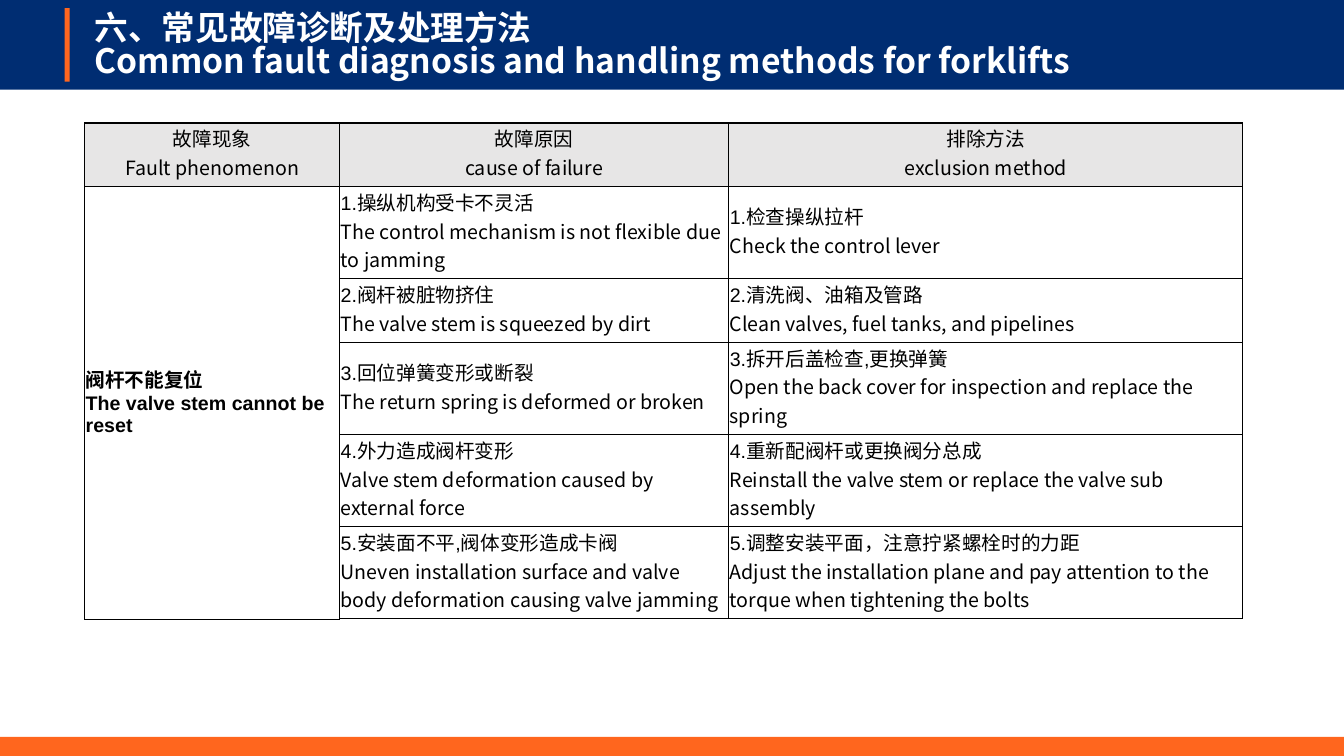
from lxml import etree
from pptx import Presentation
from pptx.dml.color import RGBColor
from pptx.enum.shapes import MSO_SHAPE
from pptx.enum.text import MSO_ANCHOR, PP_ALIGN
from pptx.oxml.ns import qn
from pptx.util import Inches, Pt

RECT = MSO_SHAPE.RECTANGLE
MIDDLE = MSO_ANCHOR.MIDDLE
CENTER, LEFT = PP_ALIGN.CENTER, PP_ALIGN.LEFT

COLORS = {"navy": "002D72", "orange": "FF661F", "foot": "FF661E",
          "head": "E7E6E6", "white": "FFFFFF", "black": "000000"}
SANS, ASIAN = "Arial", "Noto Sans CJK SC"

TITLE = ("六、常见故障诊断及处理方法",
         "Common fault diagnosis and handling methods for forklifts")
HEADS = [("故障现象", "Fault phenomenon"),
         ("故障原因", "cause of failure"),
         ("排除方法", "exclusion method")]
FAULT = ("阀杆不能复位", "The valve stem cannot be reset")
REPAIRS = [
    (("1.操纵机构受卡不灵活", "The control mechanism is not flexible due to jamming"),
     ("1.检查操纵拉杆", "Check the control lever")),
    (("2.阀杆被脏物挤住", "The valve stem is squeezed by dirt"),
     ("2.清洗阀、油箱及管路", "Clean valves, fuel tanks, and pipelines")),
    (("3.回位弹簧变形或断裂", "The return spring is deformed or broken"),
     ("3.拆开后盖检查,更换弹簧",
      "Open the back cover for inspection and replace the spring")),
    (("4.外力造成阀杆变形", "Valve stem deformation caused by external force"),
     ("4.重新配阀杆或更换阀分总成",
      "Reinstall the valve stem or replace the valve sub assembly")),
    (("5.安装面不平,阀体变形造成卡阀",
      "Uneven installation surface and valve body deformation causing valve jamming"),
     ("5.调整安装平面，注意拧紧螺栓时的力距",
      "Adjust the installation plane and pay attention to the torque "
      "when tightening the bolts")),
]
COLS = [18.98, 28.95, 38.25]
ROWS = [8.4, 12.2, 8.4, 12.2, 12.2, 12.2]


class Page:
    """Draws on one slide; lengths are percentages of its width and height."""

    def __init__(self, deck):
        self.deck = deck
        self.slide = deck.slides.add_slide(deck.slide_layouts[6])

    def wide(self, share):
        return round(self.deck.slide_width * share / 100)

    def high(self, share):
        return round(self.deck.slide_height * share / 100)

    def area(self, x, y, w, h):
        return self.wide(x), self.high(y), self.wide(w), self.high(h)

    def paint(self, fill, color):
        fill.solid()
        fill.fore_color.rgb = RGBColor.from_string(COLORS[color])

    def bar(self, color, *box):
        shape = self.slide.shapes.add_shape(RECT, *self.area(*box))
        shape.shadow.inherit = False
        self.paint(shape.fill, color)
        shape.line.fill.background()

    def run(self, para, text, size, color, face, bold=False):
        run = para.add_run()
        run.text = text
        font = run.font
        font.size, font.bold, font.name = Pt(size), bold, face
        font.color.rgb = RGBColor.from_string(COLORS[color])
        etree.SubElement(run._r.get_or_add_rPr(), qn("a:ea"), typeface=ASIAN)

    def title(self, lines, *box):
        frame = self.slide.shapes.add_textbox(*self.area(*box)).text_frame
        frame.word_wrap = True
        frame.vertical_anchor = MIDDLE
        para = frame.paragraphs[0]
        para.line_spacing = 0.82
        for i, line in enumerate(lines):
            if i:
                para.add_line_break()
            self.run(para, line, 24, "white", ASIAN, True)

    def table(self, x, y, cols, rows):
        box = self.area(x, y, sum(cols), sum(rows))
        table = self.slide.shapes.add_table(len(rows), len(cols), *box).table
        for col, share in zip(table.columns, cols):
            col.width = self.wide(share)
        for row, share in zip(table.rows, rows):
            row.height = self.high(share)
        for r in range(len(rows)):
            for c in range(len(cols)):
                cell = table.cell(r, c)
                self.edges(cell, {"L": c == 0, "R": c == len(cols) - 1,
                                  "T": r < 2, "B": r in (0, len(rows) - 1)})
                self.paint(cell.fill, "white" if r else "head")
        return table

    def edges(self, cell, sides):
        """Border the cell; a side marked true is drawn heavy."""
        props = cell._tc.get_or_add_tcPr()
        for side, heavy in sides.items():
            line = etree.SubElement(props, qn(f"a:ln{side}"),
                                    w=str(Pt(1 if heavy else 0.5)))
            fill = etree.SubElement(line, qn("a:solidFill"))
            etree.SubElement(fill, qn("a:srgbClr"), val=COLORS["black"])

    def cell(self, cell, pair, align=LEFT, second=ASIAN, bold=False):
        cell.vertical_anchor = MIDDLE
        cell.margin_left = cell.margin_right = cell.margin_top = Inches(0.01)
        cell.margin_bottom = Inches(0.05)
        frame = cell.text_frame
        paras = frame.paragraphs[0], frame.add_paragraph()
        for para, text, face in zip(paras, pair, (SANS, second)):
            para.alignment = align
            self.run(para, text, 14, "black", face, bold)


def main():
    deck = Presentation()
    deck.slide_width, deck.slide_height = Inches(13.33), Inches(7.5)
    page = Page(deck)
    page.bar("navy", 0, 0, 100, 11.87)
    page.bar("orange", 4.8, 1.07, 0.38, 9.73)
    page.bar("foot", 0, 97.47, 100, 2.53)
    page.title(TITLE, 6.3, 1.6, 86.25, 9.33)

    table = page.table(6.3, 16.27, COLS, ROWS)
    for c, head in enumerate(HEADS):
        page.cell(table.cell(0, c), head, CENTER)
    table.cell(1, 0).merge(table.cell(len(REPAIRS), 0))
    page.cell(table.cell(1, 0), FAULT, second=SANS, bold=True)
    for r, pairs in enumerate(REPAIRS, 1):
        for c, pair in enumerate(pairs, 1):
            page.cell(table.cell(r, c), pair)
    deck.save("out.pptx")


if __name__ == "__main__":
    main()
